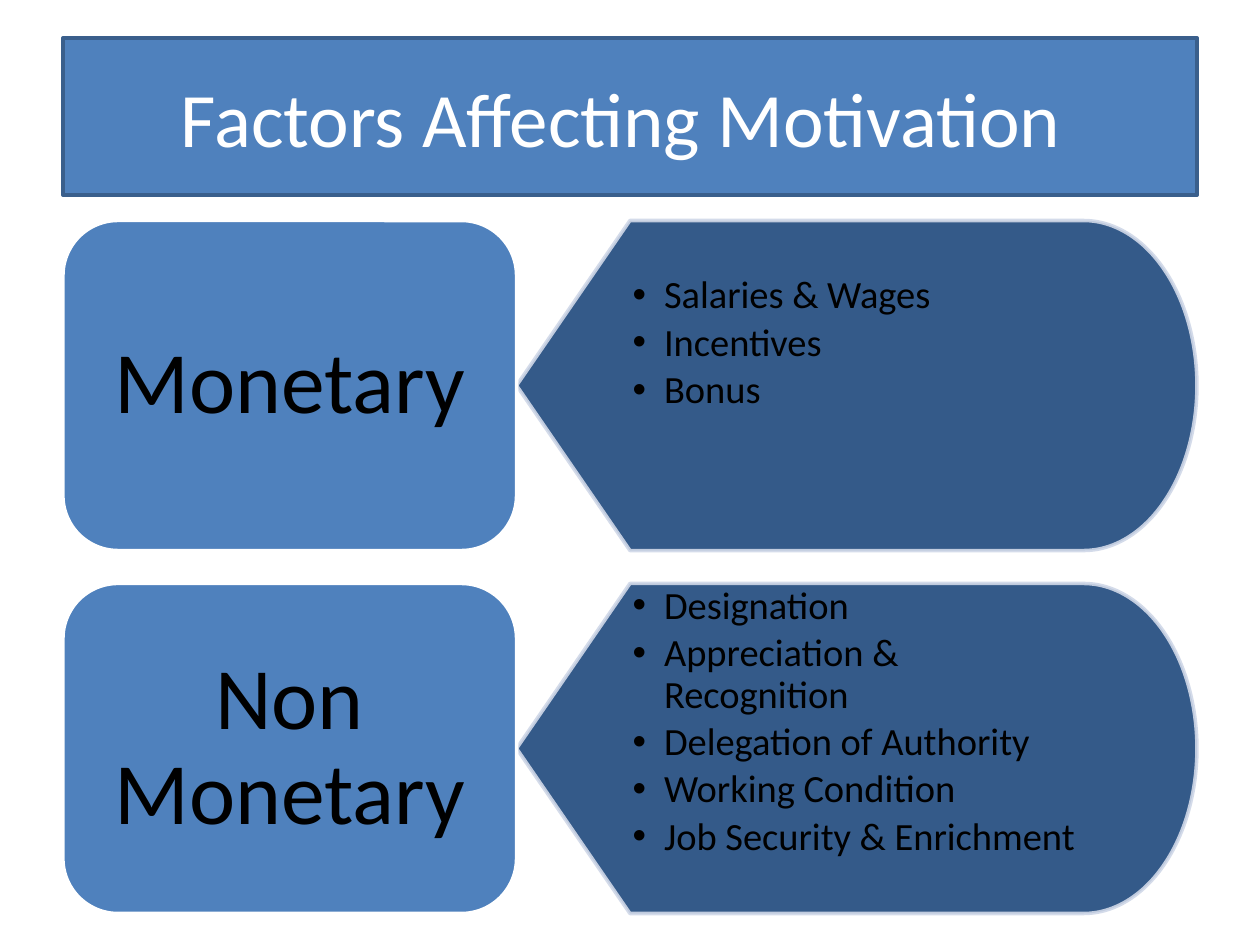
from collections import namedtuple
from lxml.etree import SubElement
from pptx import Presentation
from pptx.dml.color import RGBColor
from pptx.enum.shapes import MSO_SHAPE as Shape
from pptx.enum.text import MSO_ANCHOR as Anchor, PP_ALIGN as Align
from pptx.oxml.ns import qn
from pptx.util import Pt

BLUE = RGBColor(0x4F, 0x81, 0xBD)
EDGE = RGBColor(0x3A, 0x5F, 0x8C)
NAVY = RGBColor(0x1F, 0x49, 0x7D)
PALE = RGBColor(0xD0, 0xD8, 0xE8)
WHITE = RGBColor(0xFF, 0xFF, 0xFF)
BLACK = RGBColor(0, 0, 0)
FONT = "Calibri"

Box = namedtuple("Box", "left top width height")

TITLE_BOX = Box(36, 21.6, 648, 90)
FIRST_ROW = Box(36, 126, 648, 188.6)
ROW_PITCH = 207.4
LABEL_SHARE = 0.4

FACTORS = [
    ("Monetary ", ["Salaries & Wages", "Incentives", "Bonus"], 31.5),
    ("Non Monetary ", ["Designation", "Appreciation & Recognition",
                       "Delegation of Authority", "Working Condition",
                       "Job Security & Enrichment"], 1.5),
]


def paint(shape, fill, line):
    shape.fill.solid()
    shape.fill.fore_color.rgb = fill
    shape.line.color.rgb = line
    shape.line.width = Pt(2)


def set_opacity(properties, percent):
    for color in properties.iter(qn("a:srgbClr")):
        SubElement(color, qn("a:alpha"), val=str(percent * 1000))


def set_insets(frame, side, top, bottom):
    frame.margin_left = frame.margin_right = Pt(side)
    frame.margin_top, frame.margin_bottom = Pt(top), Pt(bottom)


def format_para(para, size, color, align):
    para.alignment = align
    para.font.name = FONT
    para.font.size = Pt(size)
    para.font.color.rgb = color


def add_bullet(para):
    properties = para._p.get_or_add_pPr()
    properties.set("marL", str(Pt(18)))
    properties.set("indent", str(-Pt(18)))
    SubElement(properties, qn("a:buFont"), typeface="Arial")
    SubElement(properties, qn("a:buChar"), char="•")


def add_panel(page, kind, box, fill, line):
    panel = page.shapes.add_shape(kind, *map(Pt, box))
    panel.shadow.inherit = False
    paint(panel, fill, line)
    panel.text_frame.word_wrap = True
    return panel


def place_title(page, box, text):
    title = page.shapes.title
    title.left, title.top, title.width, title.height = map(Pt, box)
    paint(title, BLUE, EDGE)
    frame = title.text_frame
    frame.text = text
    frame.vertical_anchor = Anchor.MIDDLE
    format_para(frame.paragraphs[0], 44, WHITE, Align.CENTER)


def add_details(page, box, items, top_inset):
    panel = add_panel(page, Shape.FLOWCHART_DISPLAY, box, NAVY, PALE)
    set_opacity(panel._element.spPr, 90)
    frame = panel.text_frame
    frame.vertical_anchor = Anchor.TOP
    set_insets(frame, 1.5, top_inset, 1.5)
    frame.text = "\n".join(items)
    for para in frame.paragraphs:
        format_para(para, 22, BLACK, Align.LEFT)
        para.line_spacing = 0.9
        para.space_after = Pt(3.3)
        add_bullet(para)


def add_label(page, box, text):
    panel = add_panel(page, Shape.ROUNDED_RECTANGLE, box, BLUE, WHITE)
    frame = panel.text_frame
    frame.vertical_anchor = Anchor.MIDDLE
    set_insets(frame, 15, 7.5, 7.5)
    frame.text = text
    para = frame.paragraphs[0]
    format_para(para, 50, BLACK, Align.CENTER)
    para.line_spacing = 0.9


def add_factor(page, box, label, items, top_inset):
    label_width = box.width * LABEL_SHARE
    details_box = box._replace(left=box.left + label_width,
                               width=box.width - label_width)
    add_details(page, details_box, items, top_inset)
    add_label(page, box._replace(width=label_width), label)


def main():
    deck = Presentation()
    deck.slide_width, deck.slide_height = Pt(720), Pt(540)
    page = deck.slides.add_slide(deck.slide_layouts.get_by_name("Title Only"))
    place_title(page, TITLE_BOX, "Factors Affecting Motivation ")
    for row, factor in enumerate(FACTORS):
        box = FIRST_ROW._replace(top=FIRST_ROW.top + row * ROW_PITCH)
        add_factor(page, box, *factor)
    deck.save("out.pptx")


if __name__ == "__main__":
    main()
